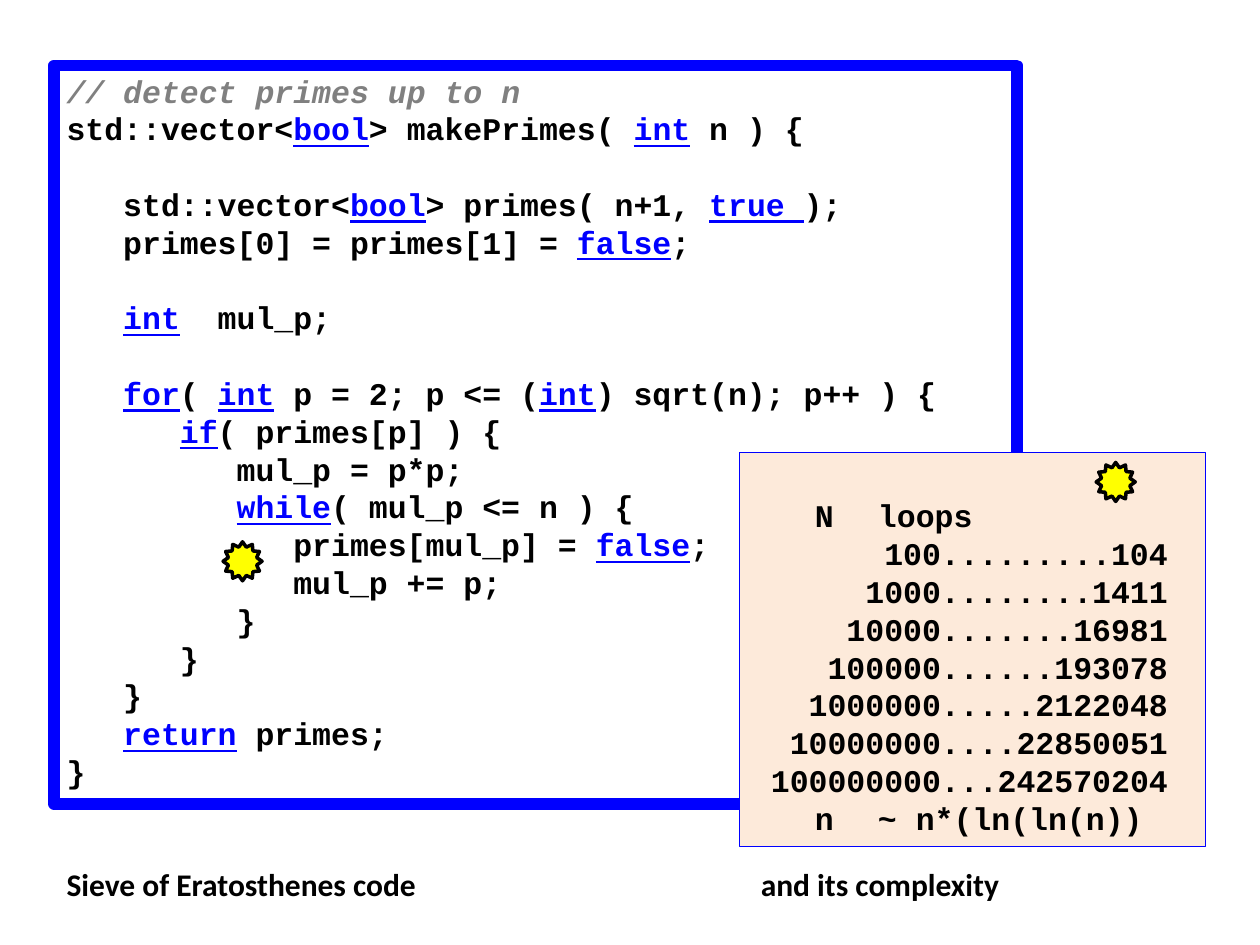
from lxml.etree import SubElement
from pptx import Presentation
from pptx.dml.color import RGBColor
from pptx.enum.shapes import MSO_SHAPE
from pptx.enum.text import MSO_ANCHOR, MSO_AUTO_SIZE
from pptx.oxml.ns import qn
from pptx.util import Inches, Pt

# (indent level, blank lines before, text); every second part between bars is a keyword
CODE = [
    (0, 0, "std::vector<|bool|> makePrimes( |int| n ) {"),
    (1, 1, "std::vector<|bool|> primes( n+1, |true |);"),
    (1, 0, "primes[0] = primes[1] = |false|;"),
    (1, 1, "|int|  mul_p;"),
    (1, 1, "|for|( |int| p = 2; p <= (|int|) sqrt(n); p++ ) {"),
    (2, 0, "|if|( primes[p] ) {"),
    (3, 0, "mul_p = p*p;"),
    (3, 0, "|while|( mul_p <= n ) {"),
    (4, 0, "primes[mul_p] = |false|;"),
    (4, 0, "mul_p += p;"),
    (3, 0, "}"),
    (2, 0, "}"),
    (1, 0, "}"),
    (1, 0, "|return| primes;"),
    (0, 0, "}"),
]
COMMENT = "// detect primes up to n"
LOOPS = [(100, 104), (1000, 1411), (10000, 16981), (100000, 193078),
         (1000000, 2122048), (10000000, 22850051), (100000000, 242570204)]
# (column, text) pairs
HEADER = [(9, "N"), (17, "loops")]
COMPLEXITY = [(4, "n"), (9, "~ n*(ln(ln(n))")]
CAPTIONS = [(0.43, "Sieve of Eratosthenes code"), (5.94, "and its complexity")]
STARS = [(1.77, 4.3), (8.7, 3.67)]

THEME = {
    "ink": "000000", "keyword": "0000FF", "comment": "808080",
    "panel": "FDEADA", "star": "FFFF00",
    "code_font": "Courier New", "caption_font": "Calibri", "size": 18,
}
CHARACTER = 0.15  # width of one code character, inches
LINE = 0.3        # height of one code line, inches
INDENT = 3        # characters per indent level
COUNT_END = 10    # column where N ends
LOOPS_WIDTH = 12  # characters for the dots and the loop count


def add_shape(slide, kind, box, line, line_width, fill=None):
    shape = slide.shapes.add_shape(kind, *map(Inches, box))
    shape.shadow.inherit = False
    if fill:
        shape.fill.solid()
        shape.fill.fore_color.rgb = RGBColor.from_string(THEME[fill])
    else:
        shape.fill.background()
    shape.line.color.rgb = RGBColor.from_string(THEME[line])
    shape.line.width = Pt(line_width)
    SubElement(shape.line._get_or_add_ln(), qn("a:round"))
    return shape


def set_frame(shape, top_lines=0):
    frame = shape.text_frame
    formats = {"word_wrap": True, "vertical_anchor": MSO_ANCHOR.TOP,
               "auto_size": MSO_AUTO_SIZE.SHAPE_TO_FIT_TEXT,
               "margin_top": Inches(0.05 + top_lines * LINE)}
    for name, value in formats.items():
        setattr(frame, name, value)
    return frame


def add_run(paragraph, text, color="ink", font="code_font", **extra):
    run = paragraph.add_run()
    run.text = text
    formats = {"name": THEME[font], "size": Pt(THEME["size"]), "bold": True, **extra}
    for name, value in formats.items():
        setattr(run.font, name, value)
    run.font.color.rgb = RGBColor.from_string(THEME[color])


def add_line(frame, column=0, blank_lines=0):
    """Start a left-aligned paragraph at a character column."""
    first = frame.paragraphs[0]
    paragraph = frame.add_paragraph() if first.runs else first
    paragraph.alignment = 1
    paragraph.space_before = Inches(blank_lines * LINE)
    properties = paragraph._p.get_or_add_pPr()
    properties.set("marL", str(Inches(column * CHARACTER)))
    properties.set("indent", "0")
    return paragraph


def add_tabbed_line(frame, cells):
    paragraph = add_line(frame)
    tabs = SubElement(paragraph._p.get_or_add_pPr(), qn("a:tabLst"))
    for column, _ in cells:
        SubElement(tabs, qn("a:tab"), pos=str(Inches(column * CHARACTER)), algn="l")
    add_run(paragraph, "".join("\t" + text for _, text in cells))


def add_code(slide):
    panel = add_shape(slide, MSO_SHAPE.RECTANGLE, (0.43, 0.52, 7.64, 5.86), "keyword", 6.75)
    frame = set_frame(panel)
    add_run(add_line(frame), COMMENT, "comment", italic=True)
    for level, blank_lines, text in CODE:
        paragraph = add_line(frame, level * INDENT, blank_lines)
        for position, part in enumerate(text.split("|")):
            if part and position % 2:
                add_run(paragraph, part, "keyword", underline=True)
            elif part:
                add_run(paragraph, part)


def add_loop_counts(slide):
    panel = add_shape(slide, MSO_SHAPE.RECTANGLE, (5.87, 3.59, 3.7, 3.13), "keyword", 0.75, "panel")
    frame = set_frame(panel, top_lines=1)
    add_tabbed_line(frame, HEADER)
    for count, loops in LOOPS:
        paragraph = add_line(frame, COUNT_END - len(str(count)))
        add_run(paragraph, f"{count}{loops:.>{LOOPS_WIDTH}}")
    add_tabbed_line(frame, COMPLEXITY)


def add_star(slide, left, top):
    add_shape(slide, MSO_SHAPE.STAR_12_POINT, (left, top, 0.31, 0.31), "ink", 2, "star")


def main():
    presentation = Presentation()
    presentation.slide_width, presentation.slide_height = Inches(10), Inches(7.5)
    slide = presentation.slides.add_slide(presentation.slide_layouts[6])
    add_code(slide)
    add_star(slide, *STARS[0])
    add_loop_counts(slide)
    add_star(slide, *STARS[1])
    for left, text in CAPTIONS:
        caption = slide.shapes.add_textbox(*map(Inches, (left, 6.82, 3.46, 0.4)))
        add_run(set_frame(caption).paragraphs[0], text, font="caption_font")
    presentation.save("out.pptx")


if __name__ == "__main__":
    main()
